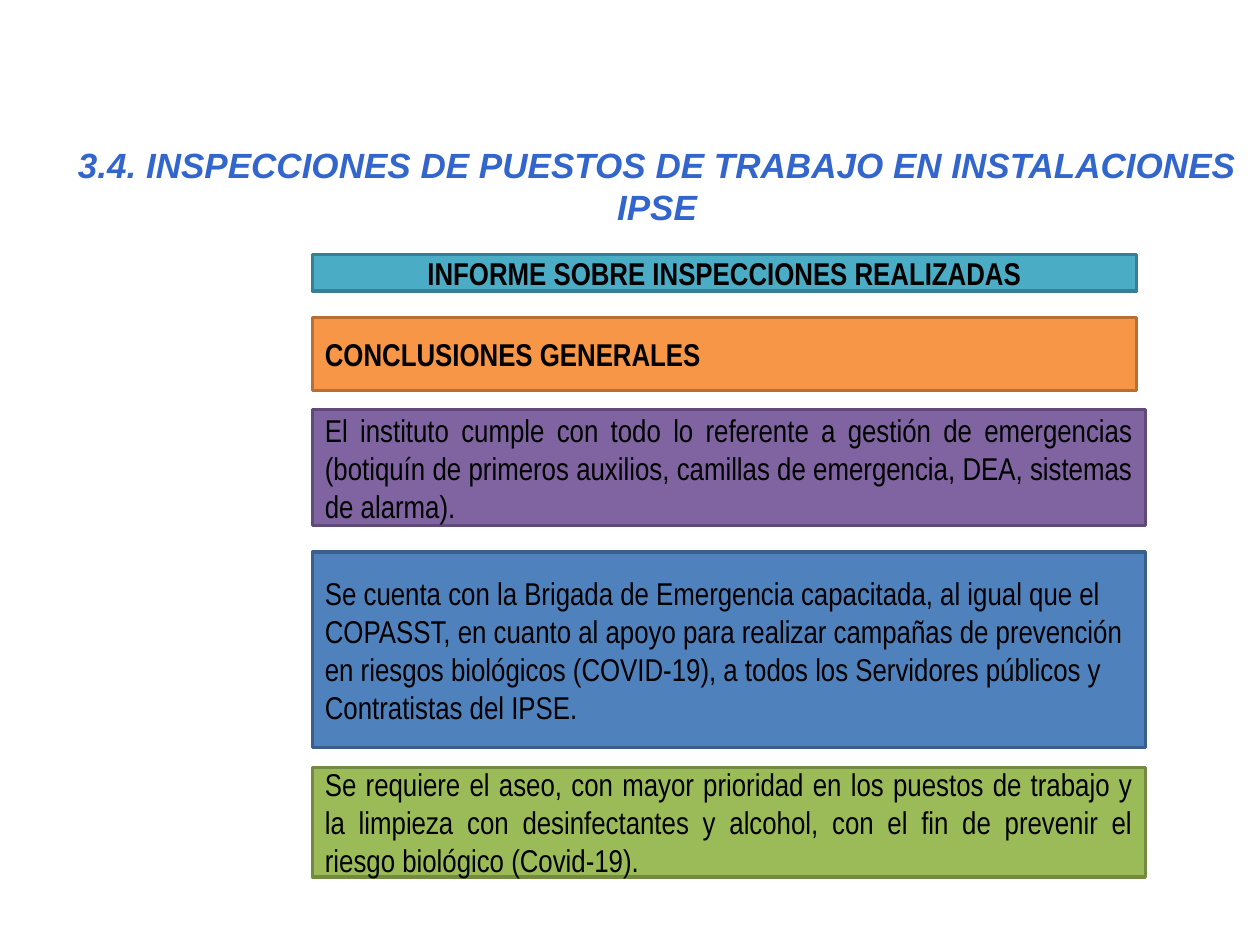
import pptx
import pptx.dml.color
import pptx.enum.shapes
import pptx.enum.text
import pptx.util

Cm, Pt = pptx.util.Cm, pptx.util.Pt
ALIGN = pptx.enum.text.PP_ALIGN
MIDDLE = pptx.enum.text.MSO_ANCHOR.MIDDLE
RECTANGLE = pptx.enum.shapes.MSO_SHAPE.RECTANGLE

# Content
HEADING = "3.4. INSPECCIONES DE PUESTOS DE TRABAJO EN INSTALACIONES IPSE"
BAND_LEFT, TITLE_WIDTH, FINDING_WIDTH = 6.3, 16.61, 16.79
# text, top, height, width (cm), fill, border, alignment, bold
BANDS = [
    ("INFORME SOBRE INSPECCIONES REALIZADAS",
     5.13, 0.74, TITLE_WIDTH, "4BACC6", "377F92", ALIGN.CENTER, True),
    ("CONCLUSIONES GENERALES",
     6.4, 1.47, TITLE_WIDTH, "F79646", "B76F34", ALIGN.LEFT, True),
    ("El instituto cumple con todo lo referente a gestión de emergencias "
     "(botiquín de primeros auxilios, camillas de emergencia, DEA, sistemas "
     "de alarma).",
     8.26, 2.34, FINDING_WIDTH, "8064A2", "5F4A78", ALIGN.JUSTIFY, False),
    ("Se cuenta con la Brigada de Emergencia capacitada, al igual que el "
     "COPASST, en cuanto al apoyo para realizar campañas de prevención en "
     "riesgos biológicos (COVID-19), a todos los Servidores públicos y "
     "Contratistas del IPSE.",
     11.13, 3.94, FINDING_WIDTH, "4F81BD", "3A5F8C", ALIGN.LEFT, False),
    ("Se requiere el aseo, con mayor prioridad en los puestos de trabajo y la "
     "limpieza con desinfectantes y alcohol, con el fin de prevenir el riesgo "
     "biológico (Covid-19).",
     15.47, 2.21, FINDING_WIDTH, "9BBB59", "738A42", ALIGN.JUSTIFY, False),
]


def rgb(value):
    return pptx.dml.color.RGBColor.from_string(value)


def write(frame, text, font_name, size, color, align, bold, italic=False):
    frame.word_wrap = True
    frame.text = text
    paragraph = frame.paragraphs[0]
    paragraph.alignment = align
    font = paragraph.runs[0].font
    font.name, font.size = font_name, Pt(size)
    font.bold, font.italic = bold, italic
    font.color.rgb = rgb(color)


deck = pptx.Presentation()
deck.slide_width, deck.slide_height = Cm(25.4), Cm(19.05)
slide = deck.slides.add_slide(deck.slide_layouts[6])

# Heading
heading = slide.shapes.add_textbox(Cm(1.09), Cm(2.77), Cm(24.31), Cm(1.96))
write(heading.text_frame, HEADING, "Arial", 20, "3366CC", ALIGN.CENTER, True, True)
heading.text_frame.auto_size = pptx.enum.text.MSO_AUTO_SIZE.SHAPE_TO_FIT_TEXT

# Coloured bands
for text, top, height, width, fill, border, align, bold in BANDS:
    band = slide.shapes.add_shape(
        RECTANGLE, Cm(BAND_LEFT), Cm(top), Cm(width), Cm(height))
    band.shadow.inherit = False
    band.fill.solid()
    band.fill.fore_color.rgb = rgb(fill)
    band.line.color.rgb = rgb(border)
    band.line.width = Pt(2)
    band.text_frame.vertical_anchor = MIDDLE
    write(band.text_frame, text, "Arial Narrow", 18, "000000", align, bold)

deck.save("out.pptx")
